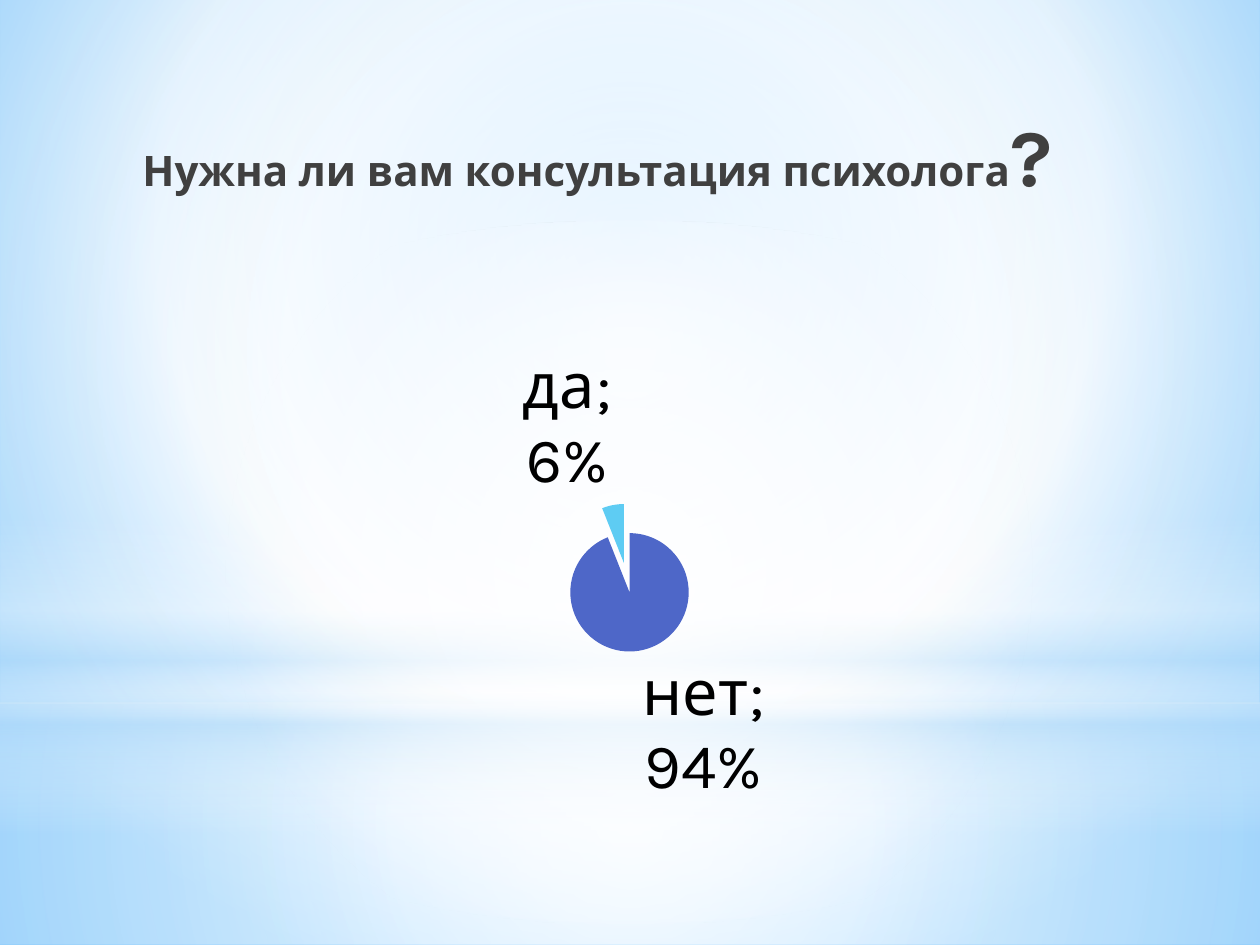
from dataclasses import dataclass

from lxml import etree
from pptx import Presentation
from pptx.chart.data import CategoryChartData
from pptx.dml.color import RGBColor
from pptx.enum.chart import XL_CHART_TYPE, XL_LABEL_POSITION
from pptx.enum.shapes import MSO_SHAPE
from pptx.enum.text import MSO_ANCHOR, PP_ALIGN
from pptx.oxml.ns import qn
from pptx.util import Inches, Pt


@dataclass(frozen=True)
class Theme:
    font: str = "Karla"
    white: str = "FFFFFF"
    pale: str = "B4DCFA"
    sky: str = "9ED5FF"
    deep_sky: str = "5BB9FF"
    title: str = "404040"
    label: str = "000000"
    slices: tuple = ("4E67C8", "5ECCF3")
    title_size: int = 24
    mark_size: int = 46
    label_size: int = 36


theme = Theme()


def set_gradient(parent, stops, focus=None):
    """Swap the solid fill for (position, colour, opacity) stops, all in percent.

    focus holds the left, top, right and bottom insets of a circular gradient;
    without it the gradient runs straight down.
    """
    solid = parent.find(qn("a:solidFill"))
    gradient = etree.Element(qn("a:gradFill"), rotWithShape="1")
    stop_list = etree.SubElement(gradient, qn("a:gsLst"))
    for position, colour, opacity in stops:
        stop = etree.SubElement(stop_list, qn("a:gs"), pos=str(position * 1000))
        tint = etree.SubElement(stop, qn("a:srgbClr"), val=colour)
        if opacity < 100:
            etree.SubElement(tint, qn("a:alpha"), val=str(opacity * 1000))
    if focus:
        circle = etree.SubElement(gradient, qn("a:path"), path="circle")
        insets = {side: str(inset * 1000) for side, inset in zip("ltrb", focus)}
        etree.SubElement(circle, qn("a:fillToRect"), **insets)
    else:
        etree.SubElement(gradient, qn("a:lin"), ang="5400000", scaled="0")
    parent.replace(solid, gradient)


deck = Presentation()
deck.slide_width, deck.slide_height = Inches(10), Inches(7.5)
page = deck.slides.add_slide(deck.slide_layouts[5])

# Background glow and the light bands over it
page.background.fill.solid()
set_gradient(
    page.element.find(".//" + qn("p:bgPr")),
    [(0, theme.sky, 100), (60, theme.white, 100), (100, theme.deep_sky, 100)],
    (20, 10, 20, 60),
)

centre = (50, 50, 50, 50)
bands = [
    (MSO_SHAPE.RECTANGLE, 5.58, 1.92, centre,
     [(0, theme.white, 91), (37, theme.white, 76), (100, theme.pale, 79)]),
    (MSO_SHAPE.RECTANGLE, 0, 5.58, centre,
     [(0, theme.white, 89), (48, theme.white, 62), (100, theme.pale, 79)]),
    (MSO_SHAPE.RECTANGLE, 4.12, 2.5, None,
     [(0, theme.white, 0), (29, theme.white, 30), (45, theme.pale, 40),
      (55, theme.white, 26), (65, theme.pale, 60), (100, theme.white, 0)]),
    (MSO_SHAPE.OVAL, 1.75, 5.58, centre,
     [(0, theme.white, 100), (56, theme.white, 0)]),
]
for kind, top, height, focus, stops in bands:
    band = page.shapes.add_shape(kind, 0, Inches(top), deck.slide_width, Inches(height))
    band.shadow.inherit = False
    band.line.fill.background()
    band.fill.solid()
    set_gradient(band.element.spPr, stops, focus)

# Title, brought in front of the bands
title = page.shapes.title
page.shapes.element.append(title.element)
title.left, title.top = Inches(0.43), Inches(0.6)
title.width, title.height = Inches(8.62), Inches(1.25)
title.text_frame.vertical_anchor = MSO_ANCHOR.MIDDLE
para = title.text_frame.paragraphs[0]
para.alignment = PP_ALIGN.CENTER
for words, size in [
    ("Нужна ли вам консультация психолога", theme.title_size),
    ("?", theme.mark_size),
]:
    span = para.add_run()
    span.text = words
    span.font.name = theme.font
    span.font.size = Pt(size)
    span.font.bold = True
    span.font.color.rgb = RGBColor.from_string(theme.title)

# Answers
answers = CategoryChartData(number_format="0%")
answers.categories = ["нет", "да"]
answers.add_series("Series 1", (0.94, 0.06))
chart = page.shapes.add_chart(
    XL_CHART_TYPE.PIE, Inches(1.61), Inches(2.65), Inches(7), Inches(3.8), answers
).chart
chart.has_title = False
chart.has_legend = False
chart.font.name = theme.font
chart.font.size = Pt(18)

pie = chart.plots[0]
pie.vary_by_categories = True
series = pie.series[0]
for index, colour in enumerate(theme.slices):
    fill = series.points[index].format.fill
    fill.solid()
    fill.fore_color.rgb = RGBColor.from_string(colour)
explosion = etree.Element(qn("c:explosion"), val="25")
series._element.find(qn("c:dPt")).addprevious(explosion)

labels = series.data_labels
labels.show_value = True
labels.show_category_name = True
labels.number_format = "0%"
labels.number_format_is_linked = False
labels.position = XL_LABEL_POSITION.OUTSIDE_END
labels.font.name = theme.font
labels.font.size = Pt(theme.label_size)
labels.font.color.rgb = RGBColor.from_string(theme.label)
separator = etree.Element(qn("c:separator"))
separator.text = "; "
labels._element.find(qn("c:showBubbleSize")).addnext(separator)

deck.save("out.pptx")
